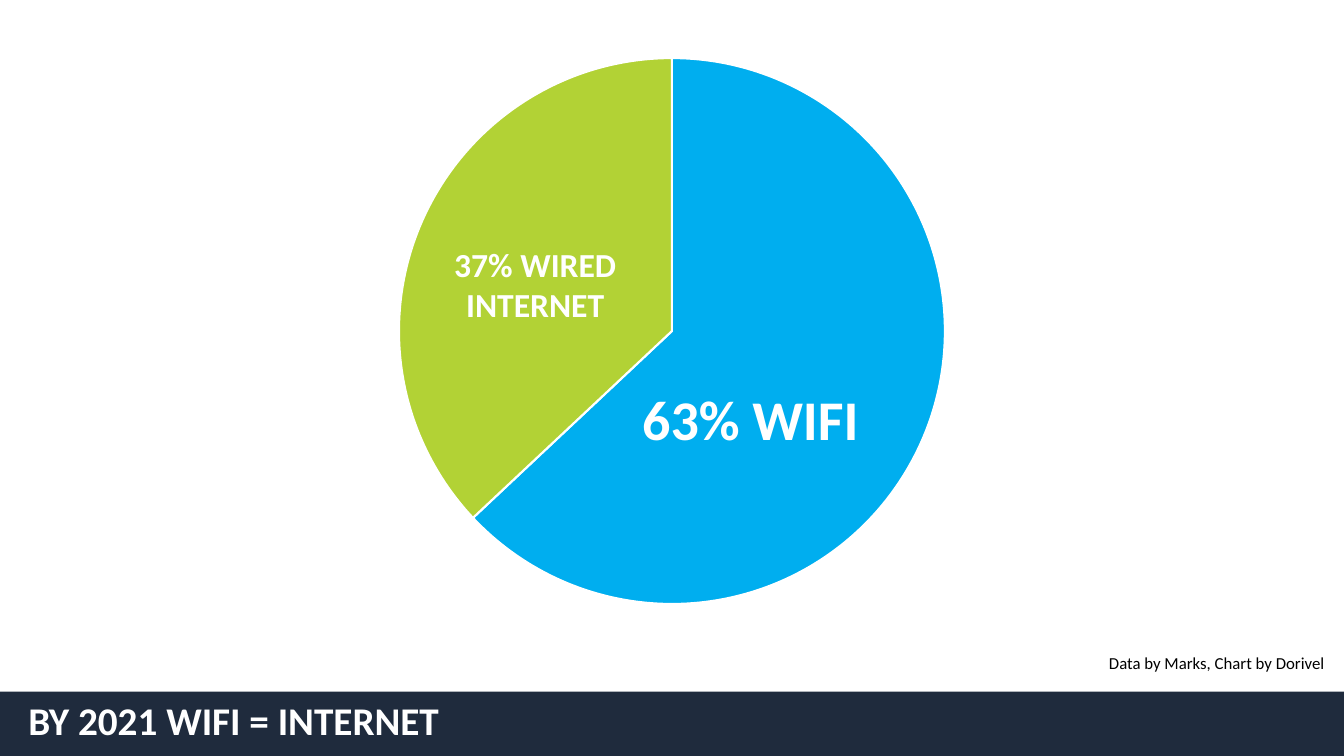
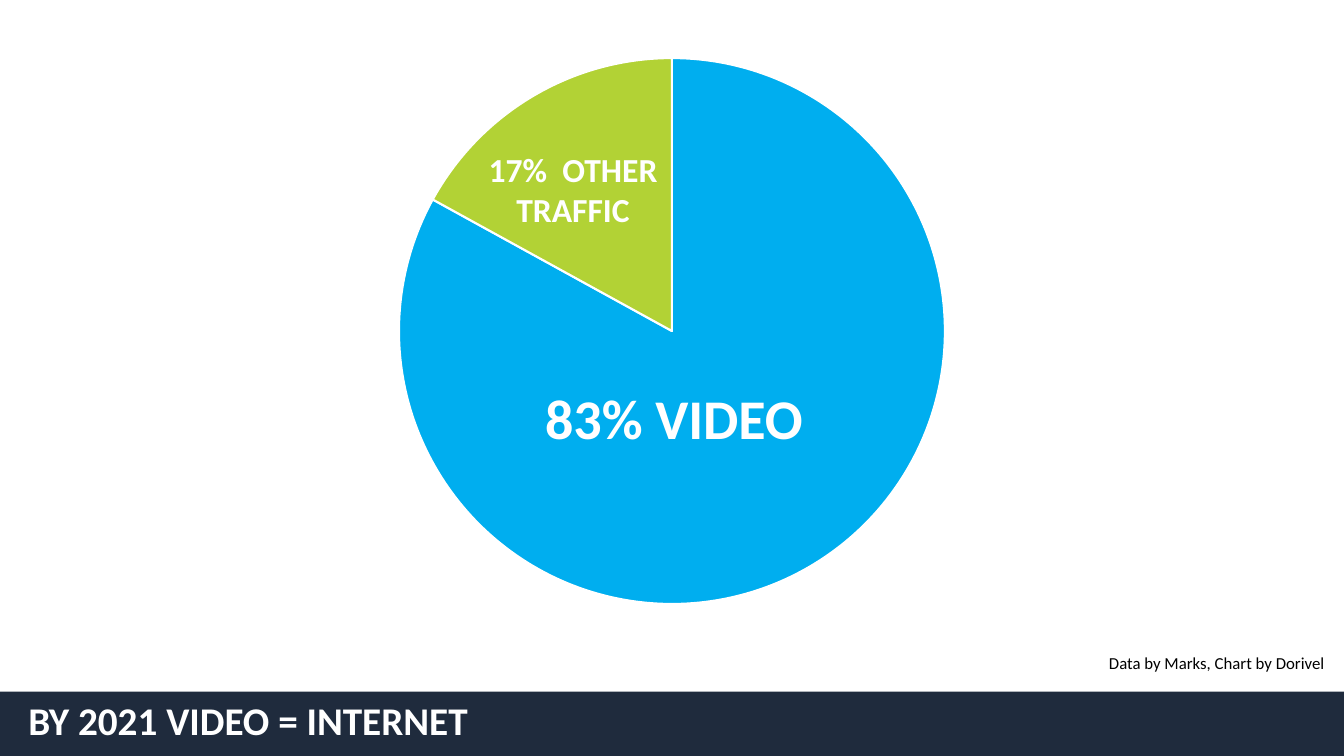
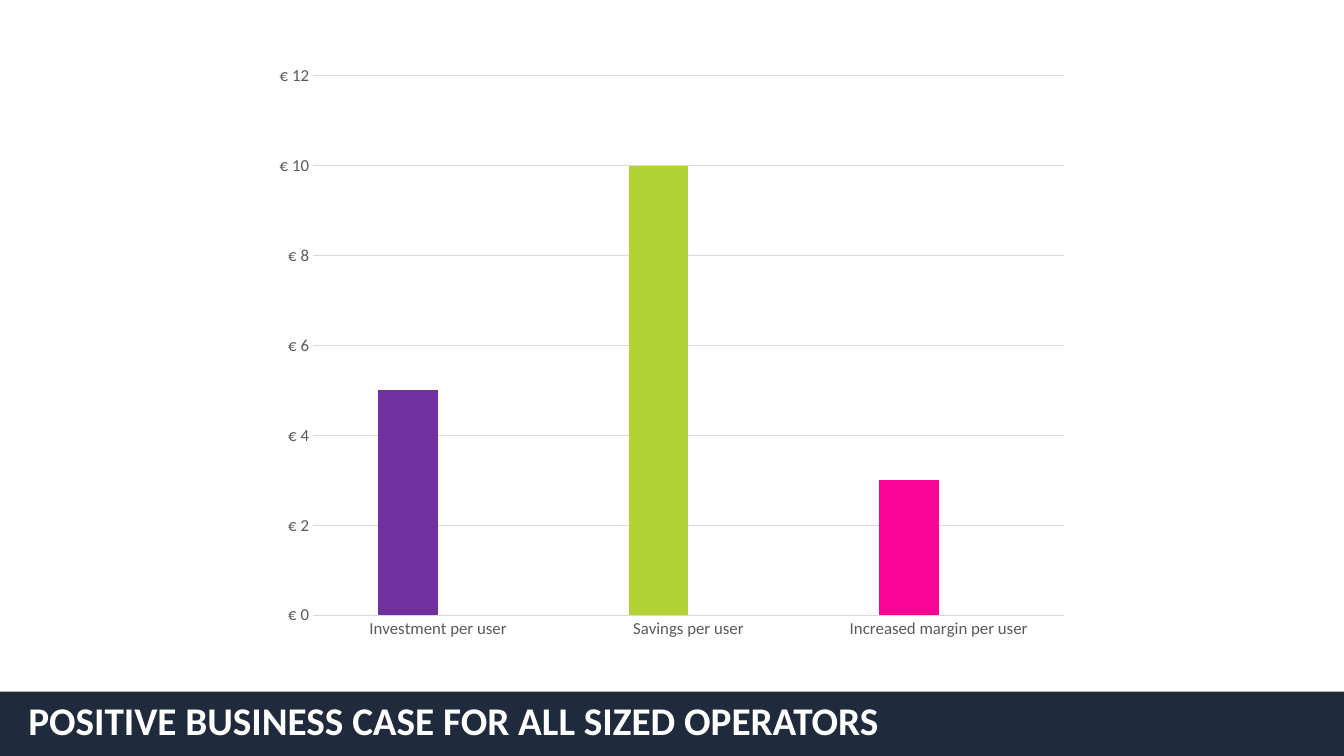
"""Build three slides on internet traffic and the business case."""
from dataclasses import dataclass
from typing import Any, Optional, Sequence

import pptx
import pptx.chart.data
import pptx.dml.color
import pptx.enum.chart
import pptx.enum.shapes
import pptx.enum.text
import pptx.oxml
import pptx.oxml.ns
import pptx.util

Pt = pptx.util.Pt
ALIGN = pptx.enum.text.PP_ALIGN
KIND = pptx.enum.chart.XL_CHART_TYPE
TICK = pptx.enum.chart.XL_TICK_MARK

FONT = "Calibri"
WIDE, HIGH = 960, 540
NAVY, BLUE, LIME = "1F2B3D", "00AEEF", "B2D235"
PLUM, PINK, GOLD = "7030A0", "FA0496", "FFC000"
WHITE, BLACK, GREY, RULE = "FFFFFF", "000000", "595959", "D9D9D9"


@dataclass(frozen=True)
class Box:
    """Place and size in points."""
    left: float
    top: float
    width: float
    height: float

    def spans(self) -> tuple:
        """Return the four lengths for python-pptx."""
        return Pt(self.left), Pt(self.top), Pt(self.width), Pt(self.height)


@dataclass(frozen=True)
class Label:
    """A text box with one run."""
    text: str
    box: Box
    size: float
    color: str = WHITE
    bold: bool = True
    align: Any = ALIGN.CENTER
    inset: float = 4.32


@dataclass(frozen=True)
class Pie:
    """A slide with a two-part pie."""
    title: str
    share: int
    labels: Sequence[Label]


BAND = Box(0, 494, WIDE, 46)
TITLE = Box(13, 493.2, 773.3, 46.8)
ROUND = Box(137.5, 31, 685, 411)
BARS = Box(187.9, 38.9, 583.9, 427)
DISC = 390
CREDIT = Label("Data by Marks, Chart by Dorivel", Box(771.1, 463, 182.2, 21.6),
               12, BLACK, False, ALIGN.RIGHT, 7.2)
PIES = (
    Pie("BY 2021 WIFI = INTERNET", 63, (
        Label("63% WIFI", Box(432.7, 270, 206.6, 80.6), 40),
        Label("37% WIRED INTERNET", Box(306, 169.9, 152.6, 66.2), 24),
        CREDIT)),
    Pie("BY 2021 VIDEO = INTERNET", 83, (
        Label("83% VIDEO", Box(369.4, 269.3, 223.9, 71.3), 40),
        Label("17%  OTHER TRAFFIC", Box(337.7, 102.2, 143.3, 66.2), 24),
        CREDIT)),
)


def tint(code: str) -> Any:
    """Turn a hex string into a colour."""
    return pptx.dml.color.RGBColor.from_string(code)


def paint(part: Any, code: str) -> None:
    """Give a shape or chart part a solid fill."""
    part.fill.solid()
    part.fill.fore_color.rgb = tint(code)


def style(font: Any, size: float, code: str, bold: bool = False) -> None:
    """Set face, size, colour and weight."""
    font.name, font.size, font.bold = FONT, Pt(size), bold
    font.color.rgb = tint(code)


def stroke(line: Any, code: str, width: float) -> None:
    """Set the colour and width of a line."""
    line.color.rgb, line.width = tint(code), Pt(width)


def write(slide: Any, label: Label) -> None:
    """Add a text box."""
    frame = slide.shapes.add_textbox(*label.box.spans()).text_frame
    frame.word_wrap = True
    frame.margin_left = frame.margin_right = Pt(label.inset)
    frame.margin_top = frame.margin_bottom = Pt(min(label.inset, 3.6)
                                                if label is CREDIT else label.inset)
    para = frame.paragraphs[0]
    para.alignment = label.align
    run = para.add_run()
    run.text = label.text
    style(run.font, label.size, label.color, label.bold)


def start(deck: Any, text: str) -> Any:
    """Add a slide with its footer band and title."""
    slide = deck.slides.add_slide(deck.slide_layouts[5])
    band = slide.shapes.add_shape(
        pptx.enum.shapes.MSO_SHAPE.RECTANGLE, *BAND.spans())
    band.shadow.inherit = False
    paint(band, NAVY)
    band.line.fill.background()
    title = slide.shapes.title
    band.element.getparent().insert(2, band.element)
    title.left, title.top, title.width, title.height = TITLE.spans()
    frame = title.text_frame
    frame.word_wrap = True
    frame.auto_size = pptx.enum.text.MSO_AUTO_SIZE.NONE
    frame.vertical_anchor = pptx.enum.text.MSO_ANCHOR.MIDDLE
    para = frame.paragraphs[0]
    para.alignment, para.line_spacing = ALIGN.LEFT, 0.9
    run = para.add_run()
    run.text = text
    style(run.font, 28, WHITE, True)
    return slide


def layout(chart: Any, box: Box, plot: Box) -> None:
    """Fix the inner plot area inside the chart."""
    parts = {
        "x": plot.left / box.width, "y": plot.top / box.height,
        "w": plot.width / box.width, "h": plot.height / box.height,
    }
    modes = '<c:xMode val="edge"/><c:yMode val="edge"/>'
    sizes = "".join(f'<c:{key} val="{val:.4f}"/>' for key, val in parts.items())
    area = chart.element.find(".//" + pptx.oxml.ns.qn("c:plotArea"))
    for old in area.findall(pptx.oxml.ns.qn("c:layout")):
        area.remove(old)
    area.insert(0, pptx.oxml.parse_xml(
        f'<c:layout {pptx.oxml.ns.nsdecls("c")}><c:manualLayout>'
        f'<c:layoutTarget val="inner"/>{modes}{sizes}'
        '</c:manualLayout></c:layout>'))


def plot(slide: Any, kind: Any, box: Box, cats: Sequence[str],
         rows: Sequence[Sequence[Optional[int]]], area: Box) -> Any:
    """Add a chart with the shared settings."""
    data = pptx.chart.data.CategoryChartData()
    data.categories = cats
    for spot, row in enumerate(rows, 1):
        data.add_series(f"Series {spot}", row)
    chart = slide.shapes.add_chart(kind, *box.spans(), data).chart
    chart.has_title = chart.has_legend = False
    style(chart.font, 10, BLACK)
    layout(chart, box, area)
    return chart


def draw_pie(deck: Any, pie: Pie) -> None:
    """Add a pie slide."""
    slide = start(deck, pie.title)
    area = Box((ROUND.width - DISC) / 2, (ROUND.height - DISC) / 2, DISC, DISC)
    row = (pie.share, None, 100 - pie.share)
    chart = plot(slide, KIND.PIE, ROUND, ("1", "2", "3"), (row,), area)
    chart.plots[0].vary_by_categories = True
    for spot, code in ((0, BLUE), (2, LIME)):
        form = chart.series[0].points[spot].format
        paint(form, code)
        stroke(form.line, WHITE, 1.5)
    for label in pie.labels:
        write(slide, label)


def draw_bars(deck: Any) -> None:
    """Add the business case slide."""
    slide = start(deck, "POSITIVE BUSINESS CASE FOR ALL SIZED OPERATORS")
    cats = ("Investment per user", "Savings per user", "Increased margin per user")
    chart = plot(slide, KIND.COLUMN_CLUSTERED, BARS, cats,
                 ((5, 10, 3), (None, None, None)), Box(35.7, 15.4, 536.4, 385.1))
    bars = chart.plots[0]
    bars.vary_by_categories = False
    bars.gap_width, bars.overlap = 219, 0
    for series, code in zip(bars.series, (BLUE, GOLD)):
        paint(series.format, code)
    for spot, code in enumerate((PLUM, LIME, PINK)):
        paint(bars.series[0].points[spot].format, code)
    base, scale = chart.category_axis, chart.value_axis
    for axis in (base, scale):
        axis.major_tick_mark = axis.minor_tick_mark = TICK.NONE
        style(axis.tick_labels.font, 12, GREY)
    stroke(base.format.line, RULE, 0.75)
    scale.format.line.fill.background()
    scale.has_major_gridlines = True
    stroke(scale.major_gridlines.format.line, RULE, 0.75)
    scale.minimum_scale, scale.maximum_scale, scale.major_unit = 0, 12, 2
    scale.tick_labels.number_format = '"€"\\ #,##0'
    scale.tick_labels.number_format_is_linked = False


def main() -> None:
    """Build and save the deck."""
    deck = pptx.Presentation()
    deck.slide_width, deck.slide_height = Pt(WIDE), Pt(HIGH)
    for pie in PIES:
        draw_pie(deck, pie)
    draw_bars(deck)
    deck.save("out.pptx")


if __name__ == "__main__":
    main()
